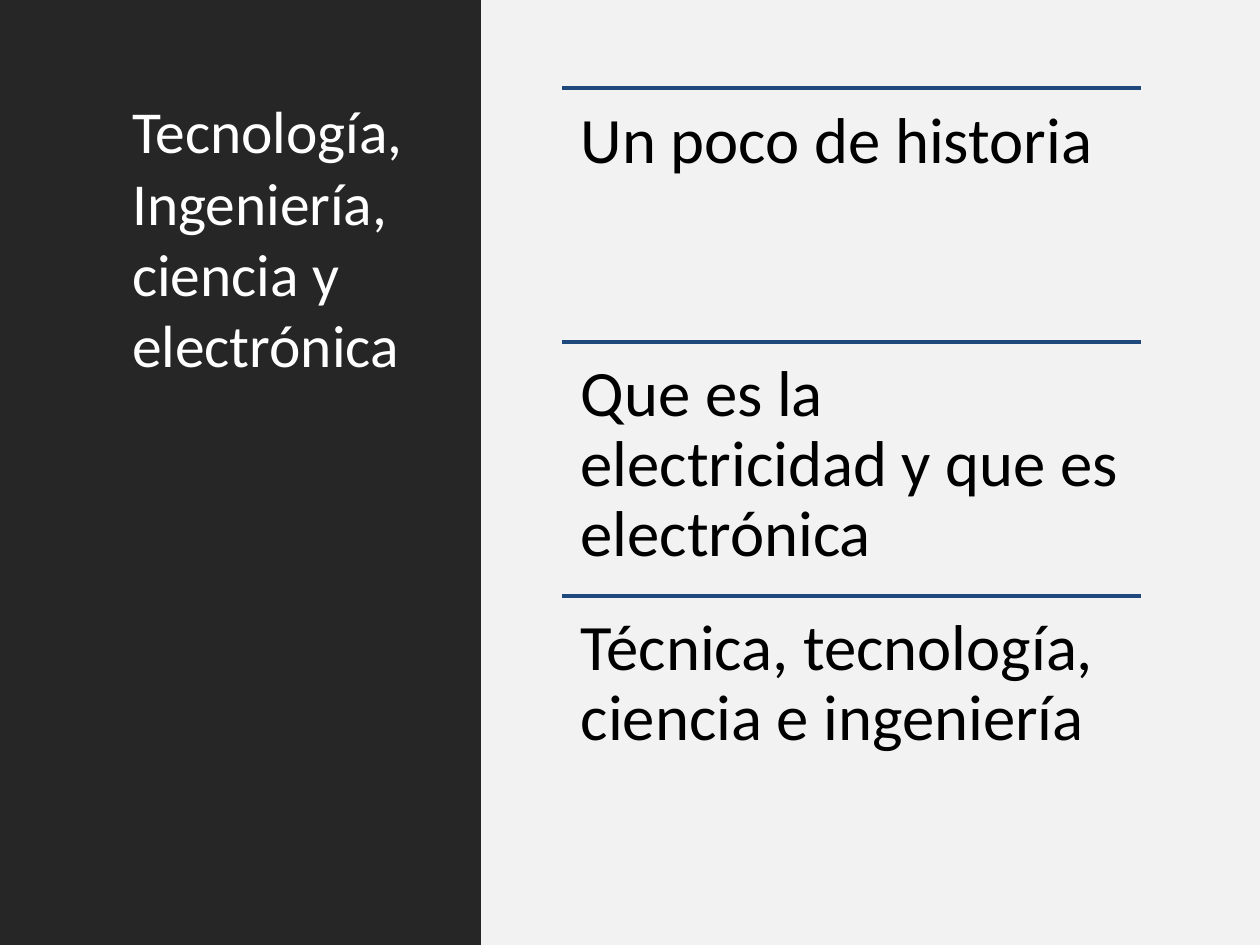
import pptx
import pptx.dml.color
import pptx.enum.shapes
import pptx.enum.text
import pptx.oxml
import pptx.oxml.ns
import pptx.util

Pt = pptx.util.Pt
RGBColor = pptx.dml.color.RGBColor

DARK = RGBColor(0x26, 0x26, 0x26)
LIGHT = RGBColor(0xF2, 0xF2, 0xF2)
WHITE = RGBColor(0xFF, 0xFF, 0xFF)
BLACK = RGBColor(0x00, 0x00, 0x00)
NAVY = RGBColor(0x1F, 0x49, 0x7D)

WIDTH, HEIGHT = 720, 540
SPLIT = 275
TOPIC_LEFT, TOPIC_TOP = 321.1, 50.4
TOPIC_WIDTH, TOPIC_HEIGHT = 331.2, 145.1

TITLE = "Tecnología, Ingeniería, ciencia y electrónica"
TOPICS = [
    "Un poco de historia",
    "Que es la electricidad y que es electrónica",
    "Técnica, tecnología, ciencia e ingeniería",
]
TITLE_FORMAT = {"line_spacing": 1.0}
TOPIC_FORMAT = {"line_spacing": 0.9, "space_after": Pt(13)}


class SlideBuilder:
    """Holds the font and the current slide."""

    def __init__(self, slide, font_name):
        self.slide = slide
        self.font_name = font_name

    def panel(self, left, top, width, height, color):
        shape = self.slide.shapes.add_shape(
            pptx.enum.shapes.MSO_SHAPE.RECTANGLE,
            Pt(left), Pt(top), Pt(width), Pt(height))
        shape.shadow.inherit = False
        shape.fill.solid()
        shape.fill.fore_color.rgb = color
        shape.line.fill.background()

    def rule(self, left, top, width, color):
        connector = self.slide.shapes.add_connector(
            pptx.enum.shapes.MSO_CONNECTOR.STRAIGHT,
            Pt(left), Pt(top), Pt(left + width), Pt(top))
        connector.line.color.rgb = color
        connector.line.width = Pt(2)
        properties = connector._element.spPr
        properties.append(pptx.oxml.parse_xml(
            "<a:effectLst %s/>" % pptx.oxml.ns.nsdecls("a")))

    def text(self, words, left, top, width, height, size, color,
             margins, paragraph_format):
        box = self.slide.shapes.add_textbox(
            Pt(left), Pt(top), Pt(width), Pt(height))
        frame = box.text_frame
        horizontal, vertical = margins
        frame_format = {
            "word_wrap": True,
            "vertical_anchor": pptx.enum.text.MSO_ANCHOR.TOP,
            "margin_left": Pt(horizontal),
            "margin_right": Pt(horizontal),
            "margin_top": Pt(vertical),
            "margin_bottom": Pt(vertical),
        }
        for name, value in frame_format.items():
            setattr(frame, name, value)
        paragraph = frame.paragraphs[0]
        for name, value in paragraph_format.items():
            setattr(paragraph, name, value)
        run = paragraph.add_run()
        run.text = words
        for name, value in {"name": self.font_name, "size": Pt(size)}.items():
            setattr(run.font, name, value)
        run.font.color.rgb = color


def main():
    presentation = pptx.Presentation()
    presentation.slide_width = Pt(WIDTH)
    presentation.slide_height = Pt(HEIGHT)
    slide = presentation.slides.add_slide(presentation.slide_layouts[6])
    builder = SlideBuilder(slide, "Calibri")

    # Title on the dark side
    builder.panel(0, 0, SPLIT, HEIGHT, DARK)
    builder.text(TITLE, 68.4, TOPIC_TOP, 171.4, 439.2, 34, WHITE,
                 (7.2, 3.6), TITLE_FORMAT)

    # Topics on the light side, each under a rule
    builder.panel(SPLIT, 0, WIDTH - SPLIT, HEIGHT, LIGHT)
    for index, topic in enumerate(TOPICS):
        top = TOPIC_TOP + index * TOPIC_HEIGHT
        builder.rule(TOPIC_LEFT, top, TOPIC_WIDTH, NAVY)
        builder.text(topic, TOPIC_LEFT, top, TOPIC_WIDTH, TOPIC_HEIGHT, 37,
                     BLACK, (10.8, 10.8), TOPIC_FORMAT)

    presentation.save("out.pptx")


if __name__ == "__main__":
    main()
